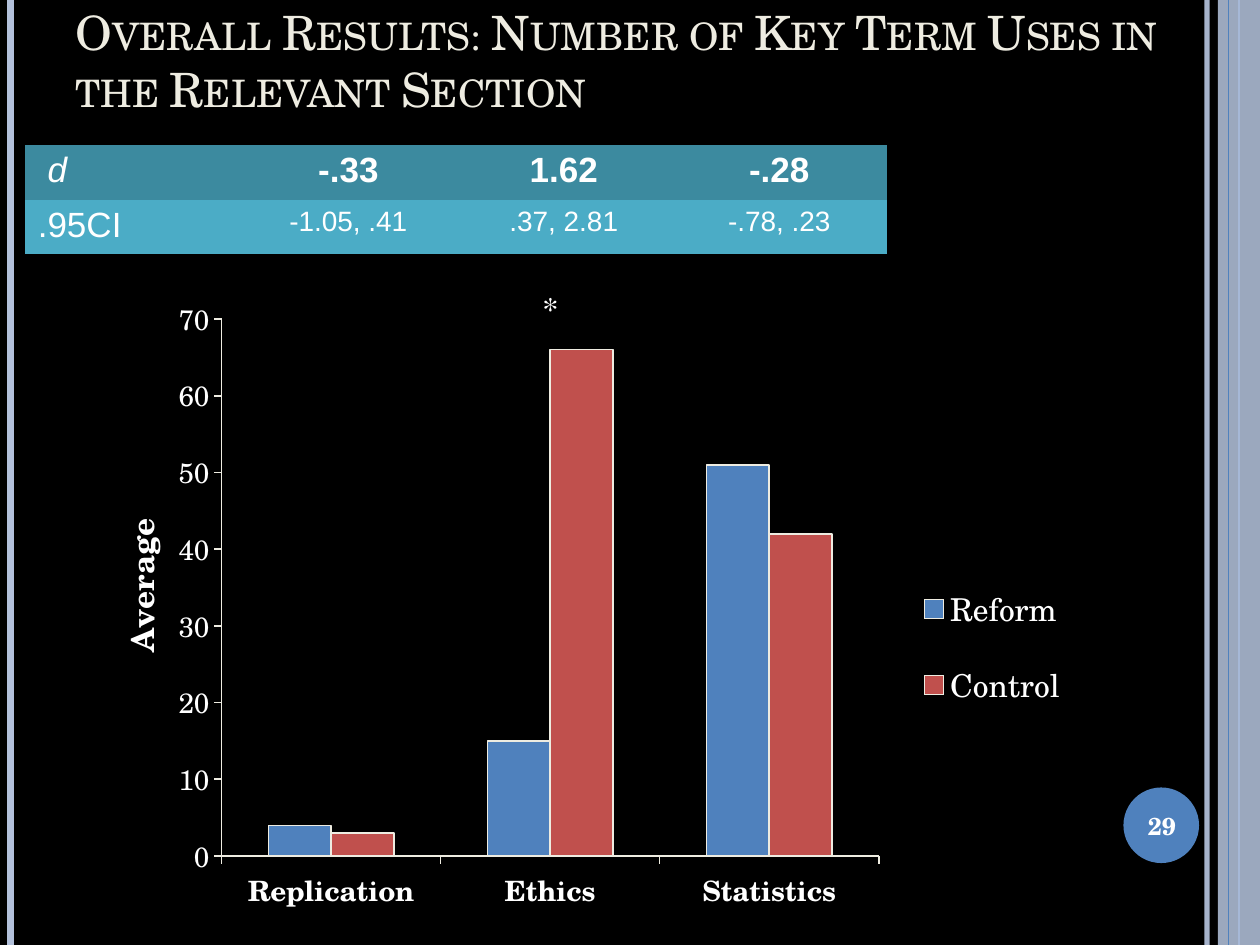
from pptx import Presentation
from pptx.chart.data import CategoryChartData
from pptx.dml.color import RGBColor
from pptx.enum.chart import XL_CHART_TYPE, XL_LEGEND_POSITION, XL_TICK_MARK
from pptx.enum.shapes import MSO_CONNECTOR, MSO_SHAPE
from pptx.enum.text import MSO_ANCHOR, PP_ALIGN
from pptx.oxml import parse_xml
from pptx.oxml.ns import nsdecls, qn
from pptx.util import Pt

COLORS = {
    "background": "000000", "white": "FFFFFF", "title": "EEECE1",
    "pale": "B3C1DB", "blue": "4F81BD", "red": "C0504D",
    "header": "3C8A9F", "body": "4BACC6",
}
SERIF, SANS = "TeX Gyre Schola", "Arial"


def rgb(name):
    return RGBColor.from_string(COLORS[name])


def set_font(font, color="white", **values):
    for key, value in values.items():
        setattr(font, key, value)
    font.color.rgb = rgb(color)


def set_alpha(element, percent):
    clr = element.find(".//" + qn("a:srgbClr"))
    clr.append(parse_xml(f'<a:alpha {nsdecls("a")} val="{percent * 1000}"/>'))


def clear_borders(cell):
    """Hide the four borders; they must come before the cell's fill."""
    properties = cell._tc.get_or_add_tcPr()
    for index, side in enumerate("LRTB"):
        properties.insert(index, parse_xml(
            f'<a:ln{side} {nsdecls("a")} w="0"><a:noFill/></a:ln{side}>'))


def layout_xml(inner=False, **parts):
    """Manual chart layout, in fractions of the chart's size."""
    target = '<c:layoutTarget val="inner"/>' if inner else ""
    modes = "".join(f'<c:{k}Mode val="edge"/>' for k in parts if k in "xy")
    values = "".join(f'<c:{k} val="{v}"/>' for k, v in parts.items())
    return parse_xml(f'<c:layout {nsdecls("c")}><c:manualLayout>{target}{modes}'
                     f"{values}</c:manualLayout></c:layout>")


def place(element, before, **parts):
    """Put a manual layout in front of the named child, in place of any other."""
    for old in element.findall(qn("c:layout")):
        element.remove(old)
    element.find(qn(before)).addprevious(layout_xml(**parts))


class SlideBuilder:
    def __init__(self, prs):
        self.slide = prs.slides.add_slide(prs.slide_layouts[6])
        self.shapes = self.slide.shapes
        fill = self.slide.background.fill
        fill.solid()
        fill.fore_color.rgb = rgb("background")

    def stripe(self, x, color, width, alpha=None):
        line = self.shapes.add_connector(
            MSO_CONNECTOR.STRAIGHT, Pt(x), Pt(0), Pt(x), Pt(540))
        line.line.color.rgb = rgb(color)
        line.line.width = Pt(width)
        if alpha:
            set_alpha(line.line._ln, alpha)
        line._element.spPr.append(parse_xml(f'<a:effectLst {nsdecls("a")}/>'))

    def shape(self, kind, box, color, alpha=None):
        shape = self.shapes.add_shape(kind, *map(Pt, box))
        shape.shadow.inherit = False
        shape.fill.solid()
        shape.fill.fore_color.rgb = rgb(color)
        shape.line.fill.background()
        if alpha:
            set_alpha(shape._element.spPr, alpha)

    def text(self, text, box, anchor, align=PP_ALIGN.LEFT, wrap=True,
             small_caps=False, **font):
        frame = self.shapes.add_textbox(*map(Pt, box)).text_frame
        frame.word_wrap = wrap
        frame.vertical_anchor = anchor
        paragraph = frame.paragraphs[0]
        paragraph.alignment = align
        run = paragraph.add_run()
        run.text = text
        set_font(run.font, **{"name": SERIF, **font})
        if small_caps:
            run.font._element.set("cap", "small")

    def table(self, rows, box, row_height):
        table = self.shapes.add_table(
            len(rows), len(rows[0][1]), *map(Pt, box)).table
        for row, (color, cells) in zip(table.rows, rows):
            row.height = Pt(row_height)
            for column, (cell, (text, font)) in enumerate(zip(row.cells, cells)):
                cell.fill.solid()
                cell.fill.fore_color.rgb = rgb(color)
                clear_borders(cell)
                paragraph = cell.text_frame.paragraphs[0]
                paragraph.alignment = PP_ALIGN.CENTER if column else PP_ALIGN.LEFT
                run = paragraph.add_run()
                run.text = text
                set_font(run.font, **{"name": SANS, "size": Pt(20),
                                      "bold": False, "italic": False, **font})

    def column_chart(self, categories, series, box, axis_title):
        data = CategoryChartData()
        data.categories = categories
        for name, _, values in series:
            data.add_series(name, values)
        chart = self.shapes.add_chart(
            XL_CHART_TYPE.COLUMN_CLUSTERED, *map(Pt, box), data).chart
        set_font(chart.font, name=SERIF, size=Pt(18))
        chart.has_title = False

        # Columns
        plot = chart.plots[0]
        for key, value in {"gap_width": 150, "overlap": 0,
                           "vary_by_categories": False}.items():
            setattr(plot, key, value)
        for column, (_, color, _) in zip(plot.series, series):
            column.format.fill.solid()
            column.format.fill.fore_color.rgb = rgb(color)
            column.format.line.color.rgb = rgb("title")
            column.format.line.width = Pt(1)

        # Axes
        for axis, bold in ((chart.category_axis, True), (chart.value_axis, False)):
            for key, value in {"has_major_gridlines": False,
                               "major_tick_mark": XL_TICK_MARK.OUTSIDE,
                               "minor_tick_mark": XL_TICK_MARK.NONE}.items():
                setattr(axis, key, value)
            axis.format.line.color.rgb = rgb("title")
            axis.format.line.width = Pt(1)
            set_font(axis.tick_labels.font, name=SERIF, size=Pt(16), bold=bold)
        value_axis = chart.value_axis
        for key, value in {"minimum_scale": 0, "maximum_scale": 70,
                           "major_unit": 10}.items():
            setattr(value_axis, key, value)
        title = value_axis.axis_title
        run = title.text_frame.paragraphs[0].add_run()
        run.text = axis_title
        set_font(run.font, name=SERIF, size=Pt(18), bold=True)
        title.text_frame._txBody.bodyPr.set("rot", "-5400000")
        place(title._element, "c:overlay", x=0.035 - 0.005 + 0.01, y=0.35)

        # Legend and plot area
        chart.has_legend = True
        chart.legend.position = XL_LEGEND_POSITION.RIGHT
        chart.legend.include_in_layout = False
        set_font(chart.legend.font, name=SERIF, size=Pt(18))
        place(chart.legend._element, "c:overlay", x=0.72, y=0.42, w=0.2, h=0.29)
        place(chart._chartSpace.chart.plotArea, "c:barChart", inner=True,
              x=0.14, y=0.04, w=0.58, h=0.86)


def main():
    prs = Presentation()
    prs.slide_width, prs.slide_height = Pt(720), Pt(540)
    page = SlideBuilder(prs)

    # Side stripes and page number disc
    page.stripe(689.8, "pale", 3, alpha=93)
    page.stripe(6, "pale", 4.5)
    page.stripe(708, "blue", 1.5)
    page.shape(MSO_SHAPE.RECTANGLE, (696, 0, 24, 540), "pale", alpha=87)
    page.stripe(702, "blue", 0.75)
    page.shape(MSO_SHAPE.OVAL, (642, 450, 43.2, 43.2), "blue")

    # Title
    page.text("Overall Results: Number of Key Term Uses in the Relevant Section",
              (36, 21, 675, 49.5), MSO_ANCHOR.BOTTOM, small_caps=True,
              size=Pt(27), color="title")

    # Average uses per section
    page.column_chart(
        ("Replication", "Ethics", "Statistics"),
        (("Reform", "blue", (4, 15, 51)), ("Control", "red", (3, 66, 42))),
        (36, 168, 647.5, 357), "Average")

    # Page number
    page.text("29", (640, 451.5, 48, 41), MSO_ANCHOR.MIDDLE, PP_ALIGN.CENTER,
              size=Pt(14), bold=True)

    # Effect sizes with confidence intervals
    strong, small = {"bold": True}, {"size": Pt(16)}
    effects = [(text, strong) for text in ("-.33", "1.62", "-.28")]
    intervals = [(text, small) for text in ("-1.05, .41", ".37, 2.81", "-.78, .23")]
    page.table((("header", [(" d", {"italic": True}), *effects]),
                ("body", [(".95CI", {}), *intervals])),
               (14.4, 82.8, 492.5, 58.8), 29.4)

    # Significance mark
    page.text("*", (303, 162, 24, 29), MSO_ANCHOR.TOP, wrap=False, size=Pt(18))

    prs.save("out.pptx")


if __name__ == "__main__":
    main()
